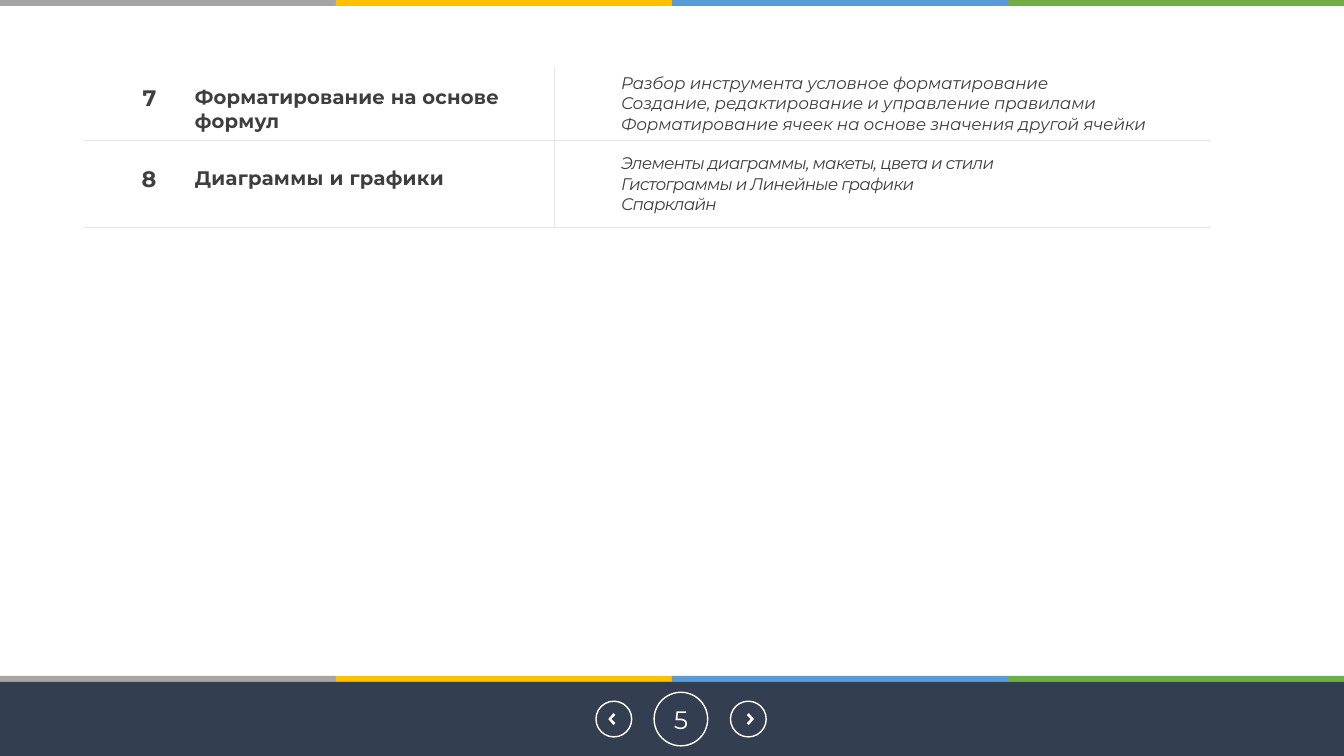
from dataclasses import dataclass

from lxml.etree import SubElement
from pptx import Presentation
from pptx.dml.color import RGBColor as Rgb
from pptx.enum.shapes import MSO_SHAPE as Preset
from pptx.enum.text import MSO_ANCHOR as Anchor, PP_ALIGN as Align
from pptx.oxml.ns import qn
from pptx.util import Cm, Pt

SLIDE_WIDTH, SLIDE_HEIGHT = 33.87, 19.05
NO_STYLE = "{2D5ABB26-0587-4C30-8999-92F81FD0307C}"


@dataclass(frozen=True)
class Theme:
    """Colours, font and type sizes of the slide."""
    font: str = "Montserrat"
    white: str = "FFFFFF"
    footer: str = "333F50"
    stripes: tuple = ("A5A5A5", "FFC000", "5B9BD5", "70AD47")
    rule: str = "E7E6E6"
    number: str = "404040"
    body: str = "3E3E3E"
    page_size: float = 18
    number_size: float = 16
    title_size: float = 14
    detail_size: float = 12


@dataclass
class SlideBuilder:
    """Draws themed elements on the current slide."""
    theme: Theme
    slide: object

    def shape(self, preset, left, top, width, height, fill=None, outline=None):
        """Draw a preset shape with an optional fill and outline."""
        shape = self.slide.shapes.add_shape(
            preset, Cm(left), Cm(top), Cm(width), Cm(height))
        self.paint(shape, fill, outline)

    def paint(self, shape, fill, outline=None):
        """Apply fill and outline, without a shadow."""
        shape.shadow.inherit = False
        if fill:
            shape.fill.solid()
            shape.fill.fore_color.rgb = Rgb.from_string(fill)
        else:
            shape.fill.background()
        if outline:
            shape.line.color.rgb = Rgb.from_string(outline)
            shape.line.width = Pt(1)
        else:
            shape.line.fill.background()

    def stripes(self, top):
        """Draw the four-colour band across the slide."""
        width = SLIDE_WIDTH / len(self.theme.stripes)
        for index, color in enumerate(self.theme.stripes):
            self.shape(Preset.RECTANGLE, index * width, top, width, 0.15, color)

    def circle(self, center_x, center_y, diameter):
        """Draw a white ring around a centre."""
        self.shape(Preset.OVAL, center_x - diameter / 2, center_y - diameter / 2,
                   diameter, diameter, outline=self.theme.white)

    def arrow_button(self, center_x, center_y, direction):
        """Draw a ring with a chevron; direction is 1 for right, -1 for left."""
        self.circle(center_x, center_y, 0.9)
        offsets = [(0.14, 0), (0.01, -0.15), (-0.04, -0.1),
                   (0.06, 0), (-0.04, 0.1), (0.01, 0.15)]
        points = [(Cm(center_x + direction * x), Cm(center_y + y))
                  for x, y in offsets]
        outline = self.slide.shapes.build_freeform(*points[0])
        outline.add_line_segments(points[1:], close=True)
        self.paint(outline.convert_to_shape(), self.theme.white)

    def run(self, paragraph, text, size, color, bold=False, italic=False, spacing=0):
        """Add one styled run; spacing is in hundredths of a point."""
        run = paragraph.add_run()
        run.text = text
        font = run.font
        font.name, font.size = self.theme.font, Pt(size)
        font.bold, font.italic = bold, italic
        font.color.rgb = Rgb.from_string(color)
        if spacing:
            font._element.set("spc", str(spacing))

    def page_number(self, center_x, center_y, text):
        """Write the page number inside its ring."""
        self.circle(center_x, center_y, 1.35)
        box = self.slide.shapes.add_textbox(
            Cm(center_x - 0.81), Cm(center_y - 0.42), Cm(1.62), Cm(0.84))
        frame = box.text_frame
        frame.word_wrap = True
        frame.vertical_anchor = Anchor.MIDDLE
        frame.margin_left = frame.margin_right = 0
        frame.margin_top = frame.margin_bottom = Cm(0.18)
        paragraph = frame.paragraphs[0]
        paragraph.alignment = Align.CENTER
        self.run(paragraph, text, self.theme.page_size, self.theme.white)

    def cell(self, cell, lines, sides, top=0, indent=0, align=Align.LEFT,
             anchor=Anchor.TOP, **style):
        """Fill a table cell with paragraphs and rule the given sides."""
        cell.margin_left = cell.margin_right = cell.margin_bottom = 0
        cell.margin_top = Cm(top)
        cell.vertical_anchor = anchor
        properties = cell._tc.get_or_add_tcPr()
        for side in sides:
            border = SubElement(properties, qn(f"a:ln{side}"), w=str(Pt(0.75)))
            fill = SubElement(border, qn("a:solidFill"))
            SubElement(fill, qn("a:srgbClr"), val=self.theme.rule)
        cell.fill.background()
        frame = cell.text_frame
        for index, line in enumerate(lines):
            paragraph = frame.add_paragraph() if index else frame.paragraphs[0]
            paragraph.alignment = align
            paragraph._p.get_or_add_pPr().set("marL", str(Cm(indent)))
            self.run(paragraph, line, **style)

    def lessons(self, left, top, widths, lessons):
        """Draw the table of lessons."""
        theme = self.theme
        heights = [lesson["height"] for lesson in lessons]
        frame = self.slide.shapes.add_table(
            len(lessons), len(widths), Cm(left), Cm(top),
            Cm(sum(widths)), Cm(sum(heights)))
        table = frame.table
        table.first_row = table.horz_banding = False
        table._tbl.tblPr.find(qn("a:tableStyleId")).text = NO_STYLE
        for column, width in zip(table.columns, widths):
            column.width = Cm(width)
        for row, lesson in zip(table.rows, lessons):
            row.height = Cm(lesson["height"])
            number, title, details = row.cells
            self.cell(number, [lesson["number"]], "B", top=lesson["top"],
                      align=Align.RIGHT, size=theme.number_size,
                      color=theme.number, bold=True)
            self.cell(title, [lesson["title"]], "RB", top=lesson["top"] + 0.03,
                      indent=0.97, size=theme.title_size, color=theme.body,
                      bold=True, spacing=lesson["title_spacing"])
            self.cell(details, lesson["details"], "LB", indent=1.68,
                      anchor=Anchor.MIDDLE, size=theme.detail_size,
                      color=theme.body, italic=True,
                      spacing=lesson["detail_spacing"])


LESSONS = [
    dict(number="7", title="Форматирование на основе формул",
         details=["Разбор инструмента условное форматирование",
                  "Создание, редактирование и управление правилами",
                  "Форматирование ячеек на основе значения другой ячейки"],
         height=1.83, top=0.43, title_spacing=10, detail_spacing=-10),
    dict(number="8", title="Диаграммы и графики",
         details=["Элементы диаграммы, макеты, цвета и стили",
                  "Гистограммы и Линейные графики",
                  "Спарклайн"],
         height=2.21, top=0.64, title_spacing=20, detail_spacing=-50),
]


def main():
    """Build the slide and save it."""
    deck = Presentation()
    deck.slide_width, deck.slide_height = Cm(SLIDE_WIDTH), Cm(SLIDE_HEIGHT)
    theme = Theme()
    builder = SlideBuilder(theme, deck.slides.add_slide(deck.slide_layouts[6]))
    footer_top, button_y = 17.17, 18.12
    builder.shape(Preset.RECTANGLE, 0, footer_top, SLIDE_WIDTH,
                  SLIDE_HEIGHT - footer_top, theme.footer)
    builder.arrow_button(15.47, button_y, -1)
    builder.arrow_button(18.86, button_y, 1)
    builder.page_number(17.16, button_y, "5")
    for top in (17.03, 0):
        builder.stripes(top)
    builder.lessons(2.11, 1.7, [1.83, 10.03, 16.54], LESSONS)
    deck.save("out.pptx")


if __name__ == "__main__":
    main()
